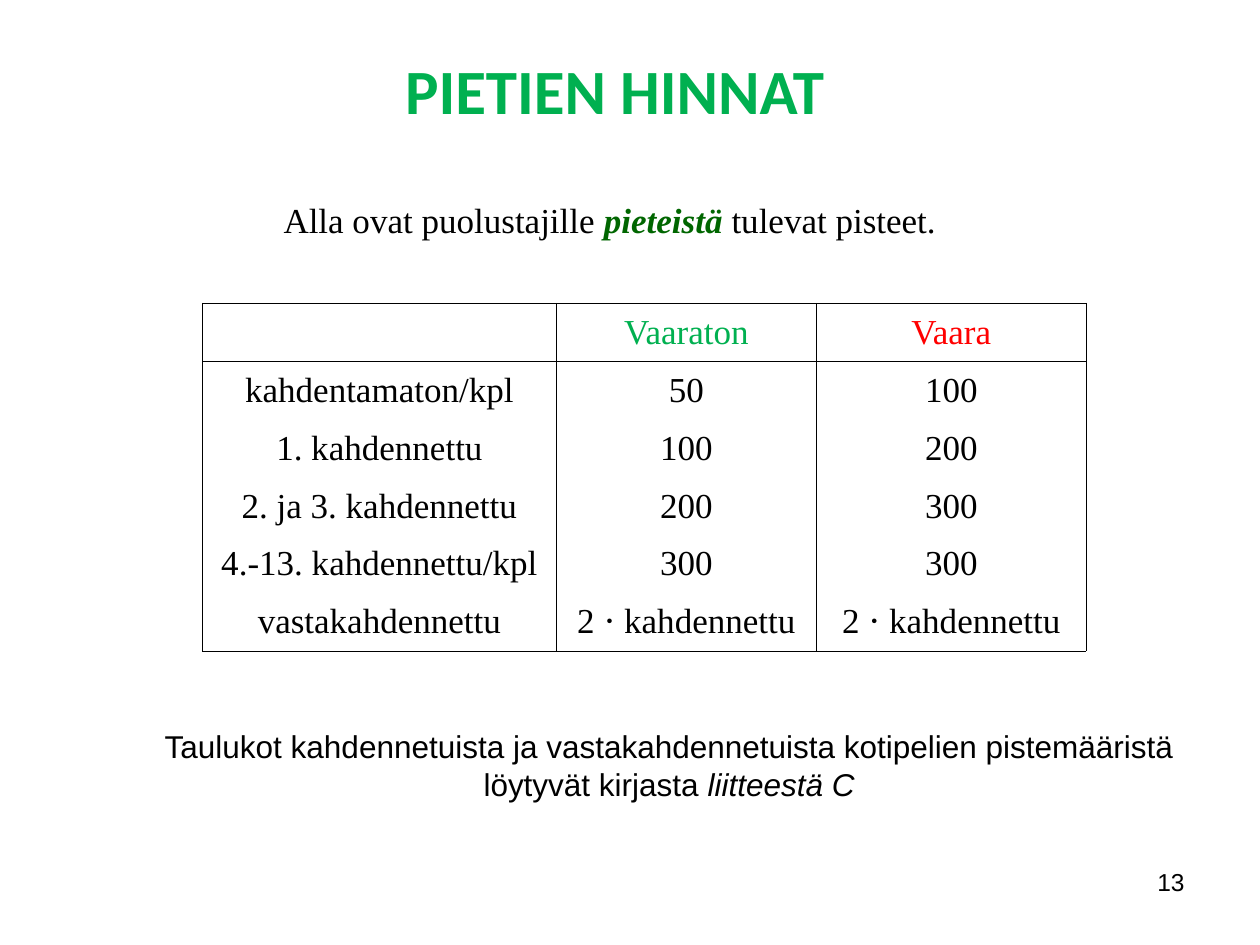
from lxml.etree import SubElement as Sub
from pptx import Presentation
from pptx.dml.color import RGBColor as RGB
from pptx.enum.text import MSO_ANCHOR as Anchor, PP_ALIGN as Align
from pptx.oxml.ns import qn
from pptx.util import Inches, Pt

WIDE, HIGH = 10, 7.5
HUES = {"ink": "000000", "green": "00B050", "dark": "006600", "red": "FF0000"}
SERIF = {"name": "Times New Roman", "size": Pt(20)}
TITLE = {"name": "Calibri", "size": Pt(36), "bold": True}
NOTE = {"name": "Arial", "size": Pt(18)}
PAGE = {"name": "Arial", "size": Pt(14)}

ROWS = [
    ("", "Vaaraton", "Vaara"),
    ("kahdentamaton/kpl", "50", "100"),
    ("1. kahdennettu", "100", "200"),
    ("2. ja 3. kahdennettu", "200", "300"),
    ("4.-13. kahdennettu/kpl", "300", "300"),
    ("vastakahdennettu", "2 ⋅ kahdennettu", "2 ⋅ kahdennettu"),
]
HEADS = ("ink", "green", "red")
COLS = (0.4, 0.295, 0.305)


def area(x, y, w, h):
    """Turn shares of the slide's size into lengths."""
    return [Inches(part * side) for part, side in
            zip((x, y, w, h), (WIDE, HIGH, WIDE, HIGH))]


def write(para, runs, base, align=Align.CENTER):
    """Fill a paragraph with (text, hue, extra format) runs."""
    para.alignment = align
    for text, hue, extra in runs:
        run = para.add_run()
        run.text = text
        for key, value in {**base, **extra}.items():
            setattr(run.font, key, value)
        run.font.color.rgb = RGB.from_string(HUES[hue])


def add_text(slide, box, runs, base, align=Align.CENTER):
    frame = slide.shapes.add_textbox(*area(*box)).text_frame
    frame.word_wrap = True
    write(frame.paragraphs[0], runs, base, align)


def edge(cell, sides):
    """Draw thin lines on the named sides and none on the others."""
    props = cell._tc.get_or_add_tcPr()
    for spot, side in enumerate("LRTB"):
        line = Sub(props, qn(f"a:ln{side}"), w=str(Pt(0.5)))
        props.insert(spot, line)
        if side in sides:
            fill = Sub(line, qn("a:solidFill"))
            Sub(fill, qn("a:srgbClr"), val=HUES["ink"])
        else:
            Sub(line, qn("a:noFill"))


def add_prices(slide, box):
    x, y, w, h = area(*box)
    table = slide.shapes.add_table(len(ROWS), len(COLS), x, y, w, h).table
    for flag in ("first_row", "horz_banding"):
        setattr(table, flag, False)
    for col, share in zip(table.columns, COLS):
        col.width = int(w * share)
    for r, row in enumerate(ROWS):
        sides = {0: "LRTB", 1: "LRT", len(ROWS) - 1: "LRB"}.get(r, "LR")
        for c, text in enumerate(row):
            cell = table.cell(r, c)
            cell.fill.background()
            cell.vertical_anchor = Anchor.MIDDLE
            hue = "ink" if r else HEADS[c]
            write(cell.text_frame.paragraphs[0], [(text, hue, {})], SERIF)
            edge(cell, sides)


def main():
    deck = Presentation()
    deck.slide_width, deck.slide_height = Inches(WIDE), Inches(HIGH)
    slide = deck.slides.add_slide(deck.slide_layouts[6])
    add_prices(slide, (0.161, 0.321, 0.701, 0.368))
    add_text(slide, (0.031, 0.203, 0.906, 0.058), [
        ("Alla ovat puolustajille ", "ink", {}),
        ("pieteistä ", "dark", {"bold": True, "italic": True}),
        ("tulevat pisteet.", "ink", {}),
    ], SERIF)
    add_text(slide, (0.043, 0.048, 0.89, 0.094),
             [("PIETIEN HINNAT", "green", {})], TITLE)
    add_text(slide, (0.082, 0.763, 0.898, 0.094), [
        ("Taulukot kahdennetuista ja vastakahdennetuista kotipelien "
         "pistemääristä löytyvät kirjasta ", "ink", {}),
        ("liitteestä C", "ink", {"italic": True}),
    ], NOTE)
    add_text(slide, (0.717, 0.911, 0.233, 0.069),
             [("13", "ink", {})], PAGE, Align.RIGHT)
    deck.save("out.pptx")


if __name__ == "__main__":
    main()
